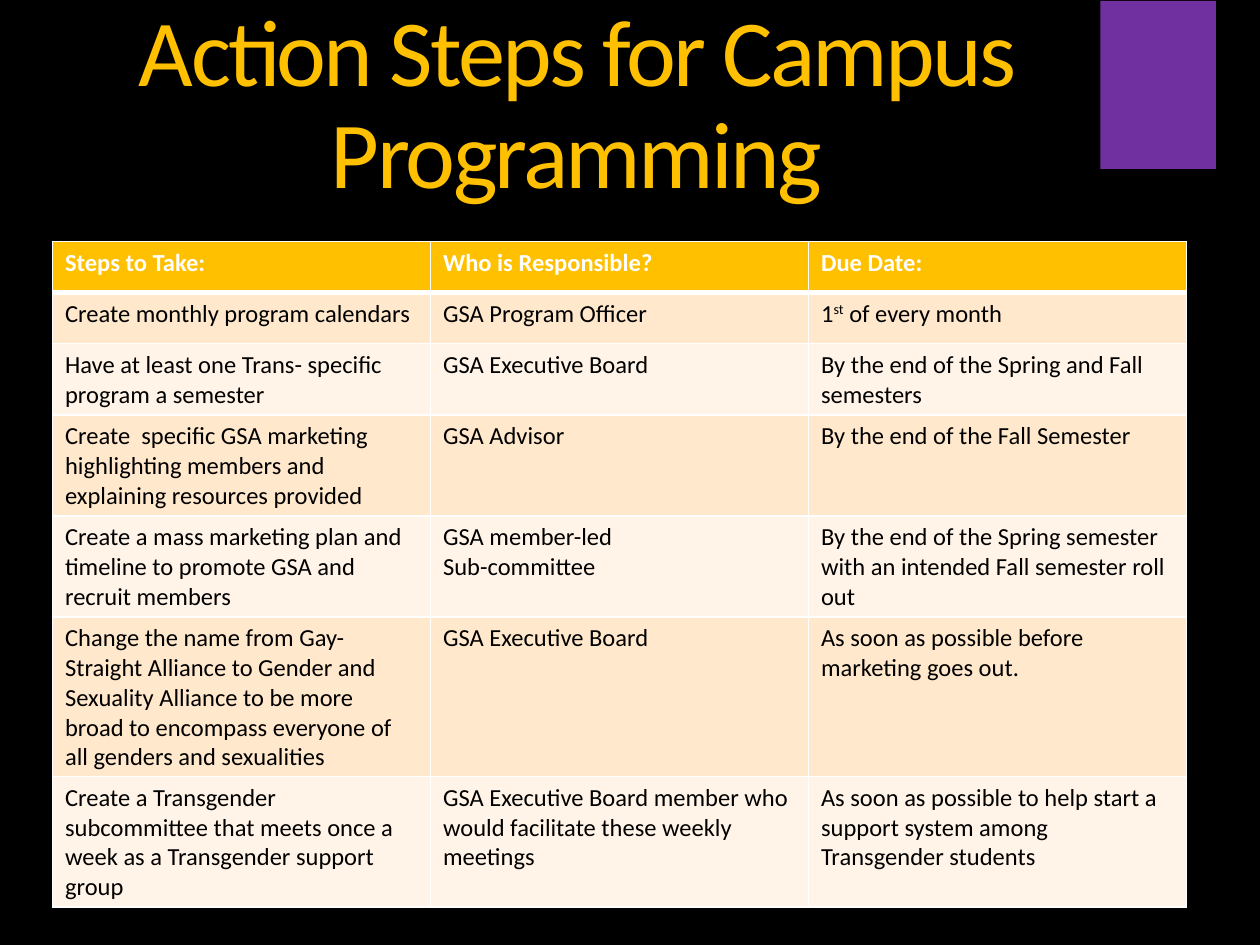
from lxml.etree import SubElement
from pptx import Presentation
from pptx.dml.color import RGBColor
from pptx.enum.shapes import MSO_SHAPE
from pptx.enum.text import MSO_ANCHOR, MSO_AUTO_SIZE, PP_ALIGN
from pptx.oxml.ns import qn
from pptx.util import Pt

GOLD, WHITE, BLACK, PURPLE = "FFC000", "FFFFFF", "000000", "7030A0"
BANDS = ("FFE8CC", "FFF4E7")

ROWS = [
    ("Steps to Take:", "Who is Responsible?", "Due Date:"),
    ("Create monthly program calendars", "GSA Program Officer",
     "1^st^ of every month"),
    ("Have at least one Trans- specific program a semester",
     "GSA Executive Board",
     "By the end of the Spring and Fall semesters"),
    ("Create  specific GSA marketing highlighting members and explaining "
     "resources provided",
     "GSA Advisor", "By the end of the Fall Semester"),
    ("Create a mass marketing plan and timeline to promote GSA and recruit "
     "members",
     "GSA member-led\nSub-committee",
     "By the end of the Spring semester with an intended Fall semester roll "
     "out"),
    ("Change the name from Gay-Straight Alliance to Gender and Sexuality "
     "Alliance to be more broad to encompass everyone of all genders and "
     "sexualities",
     "GSA Executive Board",
     "As soon as possible before marketing goes out."),
    ("Create a Transgender subcommittee that meets once a week as a "
     "Transgender support group",
     "GSA Executive Board member who would facilitate these weekly meetings",
     "As soon as possible to help start a support system among Transgender "
     "students"),
]


def rgb(value):
    return RGBColor.from_string(value)


def apply(obj, values):
    for name, value in values.items():
        setattr(obj, name, value)


class Deck:
    font = "Calibri"

    def __init__(self, width, height):
        self.prs = Presentation()
        apply(self.prs, {"slide_width": Pt(width), "slide_height": Pt(height)})

    def slide(self, background):
        self.s = self.prs.slides.add_slide(self.prs.slide_layouts[5])
        fill = self.s.background.fill
        fill.solid()
        fill.fore_color.rgb = rgb(background)

    def run(self, p, text, size, color, bold=False, **attrs):
        r = p.add_run()
        r.text = text
        apply(r.font, {"name": self.font, "size": Pt(size), "bold": bold})
        r.font.color.rgb = rgb(color)
        for name, value in attrs.items():
            r.font._element.set(name, str(value))

    def title(self, text, left, top, width, height, size, color):
        sp = self.s.shapes.title
        apply(sp, {"left": Pt(left), "top": Pt(top),
                   "width": Pt(width), "height": Pt(height)})
        tf = sp.text_frame
        apply(tf, {"margin_left": 0, "margin_top": 0, "margin_right": 0,
                   "margin_bottom": 0, "word_wrap": True,
                   "vertical_anchor": MSO_ANCHOR.MIDDLE,
                   "auto_size": MSO_AUTO_SIZE.SHAPE_TO_FIT_TEXT})
        p = tf.paragraphs[0]
        apply(p, {"alignment": PP_ALIGN.CENTER, "line_spacing": 0.9})
        self.run(p, text, size, color, spc=-150)

    def block(self, left, top, width, height, color):
        sp = self.s.shapes.add_shape(MSO_SHAPE.RECTANGLE, Pt(left), Pt(top),
                                     Pt(width), Pt(height))
        sp.shadow.inherit = False
        sp.fill.solid()
        sp.fill.fore_color.rgb = rgb(color)
        sp.line.fill.background()

    def borders(self, cell, color, widths):
        tcPr = cell._tc.get_or_add_tcPr()
        for side, width in widths.items():
            ln = SubElement(tcPr, qn(f"a:ln{side}"), w=str(Pt(width)))
            fill = SubElement(ln, qn("a:solidFill"))
            SubElement(fill, qn("a:srgbClr"), val=color)

    def cell(self, cell, text, fill, color, bold, widths):
        self.borders(cell, WHITE, widths)
        cell.fill.solid()
        cell.fill.fore_color.rgb = rgb(fill)
        tf = cell.text_frame
        for i, line in enumerate(text.split("\n")):
            p = tf.add_paragraph() if i else tf.paragraphs[0]
            for j, part in enumerate(line.split("^")):
                attrs = {"baseline": 30000} if j % 2 else {}
                self.run(p, part, 14, color, bold, **attrs)

    def table(self, rows, left, top, width, row_height):
        tbl = self.s.shapes.add_table(
            len(rows), len(rows[0]), Pt(left), Pt(top), Pt(width),
            Pt(row_height * len(rows))).table
        for i, row in enumerate(rows):
            header = i == 0
            fill = GOLD if header else BANDS[(i - 1) % 2]
            widths = {"L": 1, "R": 1, "T": 3 if i == 1 else 1,
                      "B": 3 if header else 1}
            for j, text in enumerate(row):
                self.cell(tbl.cell(i, j), text, fill,
                          WHITE if header else BLACK, header, widths)


def main():
    deck = Deck(720, 540)
    deck.slide(BLACK)
    deck.title("Action Steps for Campus Programming", 30, 2, 599, 118, 54, GOLD)
    deck.table(ROWS, 30, 138, 648, 29.2)
    deck.block(628.8, 0.5, 66, 96, PURPLE)
    deck.prs.save("out.pptx")


if __name__ == "__main__":
    main()
